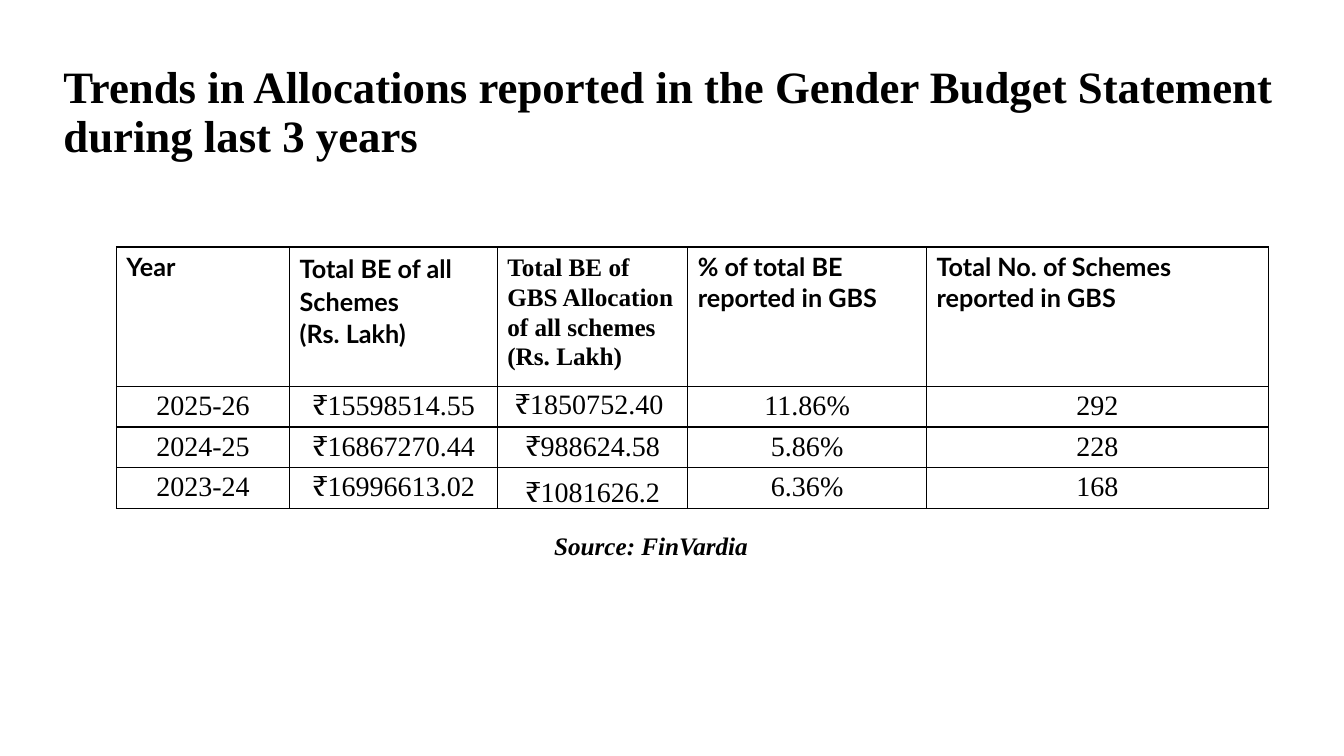
import dataclasses

import pptx
import pptx.dml.color
import pptx.enum.text
import pptx.oxml.ns
import pptx.util
from lxml import etree

Pt = pptx.util.Pt
CENTER = pptx.enum.text.PP_ALIGN.CENTER
LEFT = pptx.enum.text.PP_ALIGN.LEFT
MIDDLE = pptx.enum.text.MSO_ANCHOR.MIDDLE
BOTTOM = pptx.enum.text.MSO_ANCHOR.BOTTOM


@dataclasses.dataclass(frozen=True)
class Theme:
    ink: str = "000000"
    serif: str = "Times New Roman"
    sans: str = "Lato"
    title_size: float = 32
    header_size: float = 18
    body_size: float = 20
    source_size: float = 18
    border_width: float = 1


THEME = Theme()

TITLE = "Trends in Allocations reported in the Gender Budget Statement during last 3 years"
SOURCE = "Source: FinVardia"

# Heading, font, line spacing, column width
COLUMNS = [
    ("Year", THEME.sans, 1.0, 123.8),
    ("Total BE of all Schemes\n(Rs. Lakh)", THEME.sans, 1.07, 148.3),
    ("Total BE of GBS Allocation of all schemes (Rs. Lakh)", THEME.serif, 1.07, 136.1),
    ("% of total BE reported in GBS", THEME.sans, 1.0, 170.6),
    ("Total No. of Schemes reported in GBS", THEME.sans, 1.0, 244.1),
]
ALLOCATIONS = [
    ("2025-26", "₹15598514.55", "₹1850752.40\u00a0", "11.86%", "292"),
    ("2024-25", "₹16867270.44", "₹988624.58", "5.86%", "228"),
    ("2023-24", "₹16996613.02", "₹1081626.2", "6.36%", "168"),
]
HEADER_HEIGHT = 98
ROW_HEIGHT = 29
# (row, column) of the cells with tight margins: anchor, bottom margin
TIGHT_CELLS = {(1, 2): (MIDDLE, 3), (3, 2): (BOTTOM, 0)}


def write_text(frame, text, font_name, size, bold=False, italic=False,
               alignment=LEFT, line_spacing=1.0):
    frame.text = text
    for paragraph in frame.paragraphs:
        paragraph.alignment = alignment
        paragraph.line_spacing = line_spacing
        font = paragraph.font
        font.name, font.size = font_name, Pt(size)
        font.bold, font.italic = bold, italic
        font.color.rgb = pptx.dml.color.RGBColor.from_string(THEME.ink)


def add_title(slide, left, top, width, height):
    frame = slide.shapes.add_textbox(Pt(left), Pt(top), Pt(width), Pt(height)).text_frame
    frame.word_wrap = True
    frame.vertical_anchor = MIDDLE
    write_text(frame, TITLE, THEME.serif, THEME.title_size, bold=True, line_spacing=0.9)


def add_borders(cell):
    """Draw all four sides; the lines must precede the fill in the cell properties."""
    properties = cell._tc.get_or_add_tcPr()
    qn = pptx.oxml.ns.qn
    for index, side in enumerate(("a:lnL", "a:lnR", "a:lnT", "a:lnB")):
        line = etree.Element(qn(side), w=str(Pt(THEME.border_width)))
        fill = etree.SubElement(line, qn("a:solidFill"))
        etree.SubElement(fill, qn("a:srgbClr"), val=THEME.ink)
        properties.insert(index, line)


def add_allocation_table(slide, left, top):
    width = sum(column[3] for column in COLUMNS)
    height = HEADER_HEIGHT + ROW_HEIGHT * len(ALLOCATIONS)
    table = slide.shapes.add_table(len(ALLOCATIONS) + 1, len(COLUMNS),
                                   Pt(left), Pt(top), Pt(width), Pt(height)).table
    table.first_row = table.horz_banding = False
    for row_index, row in enumerate(table.rows):
        row.height = Pt(ROW_HEIGHT if row_index else HEADER_HEIGHT)
    for column_index, (heading, font_name, spacing, column_width) in enumerate(COLUMNS):
        table.columns[column_index].width = Pt(column_width)
        write_text(table.cell(0, column_index).text_frame, heading, font_name,
                   THEME.header_size, bold=True, line_spacing=spacing)
    for row_index, values in enumerate(ALLOCATIONS, start=1):
        for column_index, value in enumerate(values):
            cell = table.cell(row_index, column_index)
            write_text(cell.text_frame, value, THEME.serif, THEME.body_size, alignment=CENTER)
            cell.margin_top, cell.margin_bottom = Pt(3), Pt(2)
    for (row_index, column_index), (anchor, bottom_margin) in TIGHT_CELLS.items():
        cell = table.cell(row_index, column_index)
        cell.vertical_anchor = anchor
        cell.margin_left = cell.margin_right = cell.margin_top = Pt(0.7)
        cell.margin_bottom = Pt(bottom_margin)
    for cell in table.iter_cells():
        cell.fill.background()
        add_borders(cell)


def add_source(slide, left, top, width, height):
    frame = slide.shapes.add_textbox(Pt(left), Pt(top), Pt(width), Pt(height)).text_frame
    frame.word_wrap = False
    frame.auto_size = pptx.enum.text.MSO_AUTO_SIZE.SHAPE_TO_FIT_TEXT
    write_text(frame, SOURCE, THEME.serif, THEME.source_size,
               bold=True, italic=True, alignment=CENTER)


def main():
    presentation = pptx.Presentation()
    presentation.slide_width, presentation.slide_height = Pt(960), Pt(540)
    slide = presentation.slides.add_slide(presentation.slide_layouts[6])
    add_title(slide, 38.2, 28.8, 890.6, 104.4)
    add_allocation_table(slide, 83.1, 176.4)
    add_source(slide, 388, 375.1, 154, 28.8)
    presentation.save("out.pptx")


if __name__ == "__main__":
    main()
